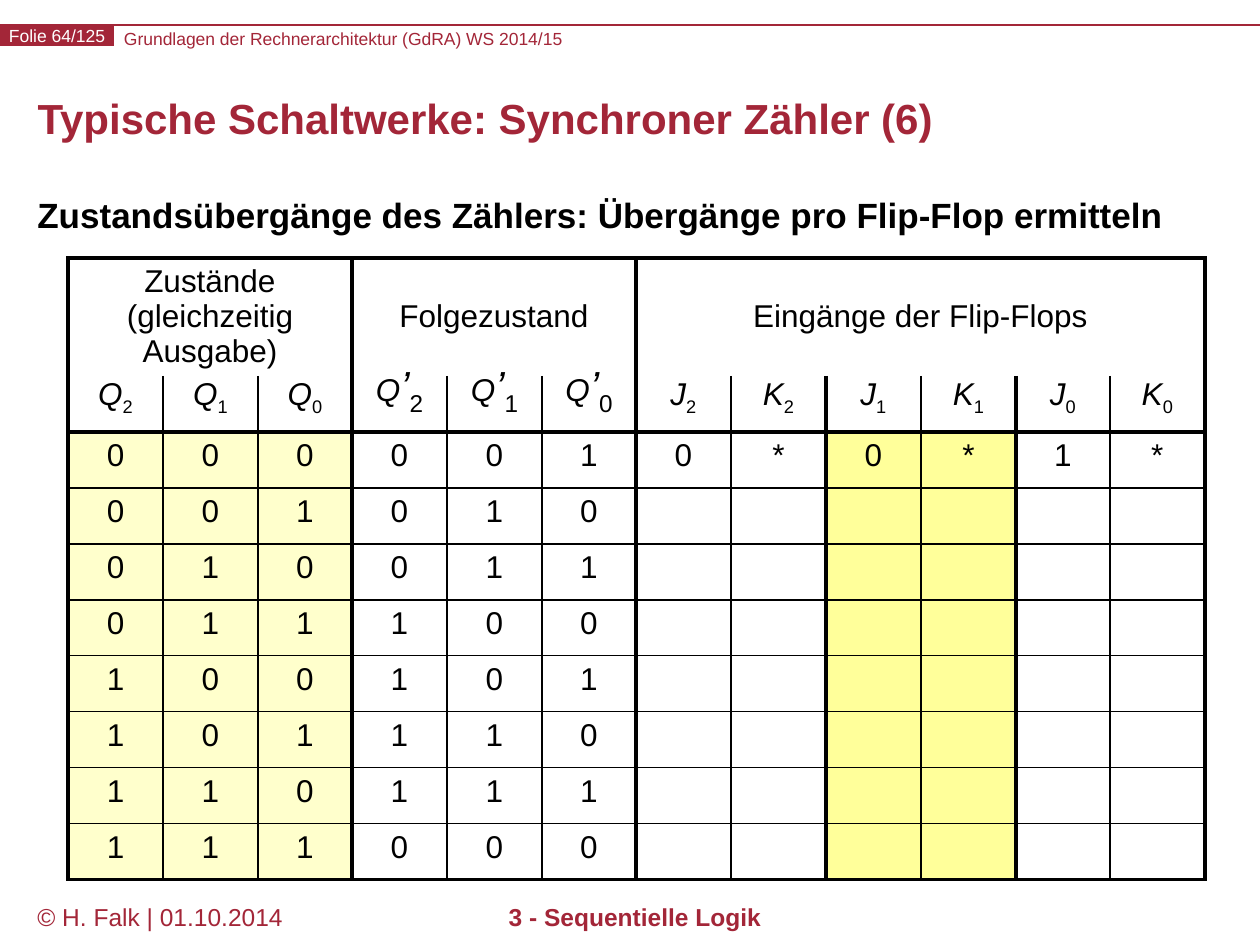
from lxml import etree
from pptx import Presentation
from pptx import util as u
from pptx.dml.color import RGBColor
from pptx.enum import shapes, text
from pptx.oxml.ns import qn

SCALE = u.Inches(1) / 126
RED, BLACK, WHITE = "A32638", "000000", "FFFFFF"
PALE, YELLOW = "FFFFCC", "FFFF9A"
THIN, THICK = 1, 2.25
NO_STYLE = "{2D5ABB26-0587-4C30-8999-92F81FD0307C}"
CENTER = text.PP_ALIGN.CENTER
MIDDLE = text.MSO_ANCHOR.MIDDLE
TOP = text.MSO_ANCHOR.TOP

GROUPS = [(0, 3, "Zustände\v(gleichzeitig Ausgabe)", TOP),
          (3, 6, "Folgezustand", MIDDLE),
          (6, 12, "Eingänge der Flip-Flops", MIDDLE)]
SYMBOLS = ["Q2", "Q1", "Q0", "Q’2", "Q’1", "Q’0", "J2", "K2", "J1", "K1", "J0", "K0"]
INPUTS = ["0*0*1*"] + [" " * 6] * 7
THICK_EDGES = {0, 3, 6, 8, 10, 12}


def px(length):
    return u.Emu(round(length * SCALE))


def color(value):
    return RGBColor.from_string(value)


class Deck:
    font = "Arial"

    def __init__(self, width, height):
        self.presentation = Presentation()
        self.presentation.slide_width = px(width)
        self.presentation.slide_height = px(height)
        self.slide = self.presentation.slides.add_slide(self.presentation.slide_layouts[5])

    def run(self, paragraph, content, size, fill, bold=False, italic=False, subscript=False):
        run = paragraph.add_run()
        run.text = content
        run.font.name = self.font
        run.font.size = u.Pt(size)
        run.font.bold = bold
        run.font.italic = italic
        run.font.color.rgb = color(fill)
        if subscript:
            run.font._element.set("baseline", "-25000")

    def title(self, content, box):
        shape = self.slide.shapes.title
        shape.left, shape.top, shape.width, shape.height = map(px, box)
        shape.text_frame.vertical_anchor = MIDDLE
        shape.text_frame.auto_size = text.MSO_AUTO_SIZE.NONE
        paragraph = shape.text_frame.paragraphs[0]
        paragraph.alignment = text.PP_ALIGN.LEFT
        paragraph.line_spacing = u.Pt(24)
        self.run(paragraph, content, 24, RED, bold=True)

    def label(self, content, box, size, fill, bold=False, align=None, spacing=None, inset=True):
        frame = self.slide.shapes.add_textbox(*map(px, box)).text_frame
        frame.word_wrap = True
        if not inset:
            self.clear_margins(frame)
        paragraph = frame.paragraphs[0]
        paragraph.alignment = align
        paragraph.line_spacing = spacing
        self.run(paragraph, content, size, fill, bold)

    def clear_margins(self, frame):
        frame.margin_left = frame.margin_right = frame.margin_top = frame.margin_bottom = 0

    def badge(self, content, box):
        shape = self.slide.shapes.add_shape(shapes.MSO_SHAPE.RECTANGLE, *map(px, box))
        shape.shadow.inherit = False
        shape.fill.solid()
        shape.fill.fore_color.rgb = color(RED)
        shape.line.fill.background()
        frame = shape.text_frame
        frame.word_wrap = False
        frame.vertical_anchor = MIDDLE
        self.clear_margins(frame)
        frame.paragraphs[0].alignment = CENTER
        self.run(frame.paragraphs[0], content, 10, WHITE)

    def rule(self, start, end):
        line = self.slide.shapes.add_connector(
            shapes.MSO_CONNECTOR.STRAIGHT, *map(px, start + end))
        line.line.color.rgb = color(RED)
        line.line.width = u.Pt(0.75)
        etree.SubElement(line._element.spPr, qn("a:effectLst"))

    def table(self, left, top, width, heights, columns):
        edges = [round(width * i / columns) for i in range(columns + 1)]
        frame = self.slide.shapes.add_table(
            len(heights), columns, px(left), px(top), px(width), px(sum(heights)))
        table = frame.table
        table.first_row = table.horz_banding = False
        table._tbl.tblPr.find(qn("a:tableStyleId")).text = NO_STYLE
        for column, start, end in zip(table.columns, edges, edges[1:]):
            column.width = px(end - start)
        for row, height in zip(table.rows, heights):
            row.height = px(height)
        return table

    def cell(self, cell, runs, borders, fill=None, anchor=TOP):
        properties = cell._tc.get_or_add_tcPr()
        for side, width in zip("LRTB", borders):
            line = etree.SubElement(properties, qn("a:ln" + side), w=str(int(u.Pt(width))))
            if width:
                solid = etree.SubElement(line, qn("a:solidFill"))
                etree.SubElement(solid, qn("a:srgbClr"), val=BLACK)
            else:
                etree.SubElement(line, qn("a:noFill"))
        if fill:
            cell.fill.solid()
            cell.fill.fore_color.rgb = color(fill)
        else:
            cell.fill.background()
        cell.vertical_anchor = anchor
        paragraph = cell.text_frame.paragraphs[0]
        paragraph.alignment = CENTER
        paragraph.line_spacing = u.Pt(20)
        for content, size, italic, subscript in runs:
            for index, part in enumerate(content.split("\v")):
                if index:
                    paragraph.add_line_break()
                self.run(paragraph, part, size, BLACK, italic=italic, subscript=subscript)


def symbol_runs(symbol):
    primed = "’" in symbol
    runs = [(symbol[0], 18, True, False)]
    if primed:
        runs.append(("’", 24, True, False))
    return runs + [(symbol[-1], 24 if primed else 18, False, True)]


def edge(index):
    return THICK if index in THICK_EDGES else THIN


def column_fill(column):
    if column < 3:
        return PALE
    return YELLOW if column in (8, 9) else None


def transition_table(deck):
    table = deck.table(68, 258, 1137, [118] + [56] * 9, 12)
    for start, end, heading, anchor in GROUPS:
        for column in range(start, end):
            runs = [(heading, 18, False, False)] if column == start else []
            deck.cell(table.cell(0, column), runs, (THICK, THICK, THICK, 0), anchor=anchor)
        table.cell(0, start).merge(table.cell(0, end - 1))
    for column, symbol in enumerate(SYMBOLS):
        sides = edge(column), edge(column + 1)
        deck.cell(table.cell(1, column), symbol_runs(symbol), sides + (0, THICK))
        for state, inputs in enumerate(INPUTS):
            values = f"{state:03b}{(state + 1) % 8:03b}{inputs}"
            value = values[column].strip()
            runs = [(value, 18, False, False)] if value else []
            top = THICK if state == 0 else THIN
            bottom = THICK if state == 7 else THIN
            deck.cell(table.cell(state + 2, column), runs, sides + (top, bottom),
                      column_fill(column))


def main():
    deck = Deck(1260, 945)
    deck.rule((0, 25), (1260, 25))
    deck.label("Grundlagen der Rechnerarchitektur (GdRA) WS 2014/15",
               (124, 28, 832, 21), 10, RED, inset=False)
    deck.badge("Folie 64/125", (0, 25, 114, 21))
    deck.label("© H. Falk | 01.10.2014", (25, 896, 277, 49), 14, RED)
    deck.label("3 - Sequentielle Logik", (253, 896, 764, 49), 14, RED, bold=True, align=CENTER)
    deck.title("Typische Schaltwerke: Synchroner Zähler (6)", (25, 76, 1211, 91))
    deck.label("Zustandsübergänge des Zählers: Übergänge pro Flip-Flop ermitteln",
               (25, 192, 1211, 688), 20, BLACK, bold=True, spacing=0.9)
    transition_table(deck)
    deck.presentation.save("out.pptx")


if __name__ == "__main__":
    main()
